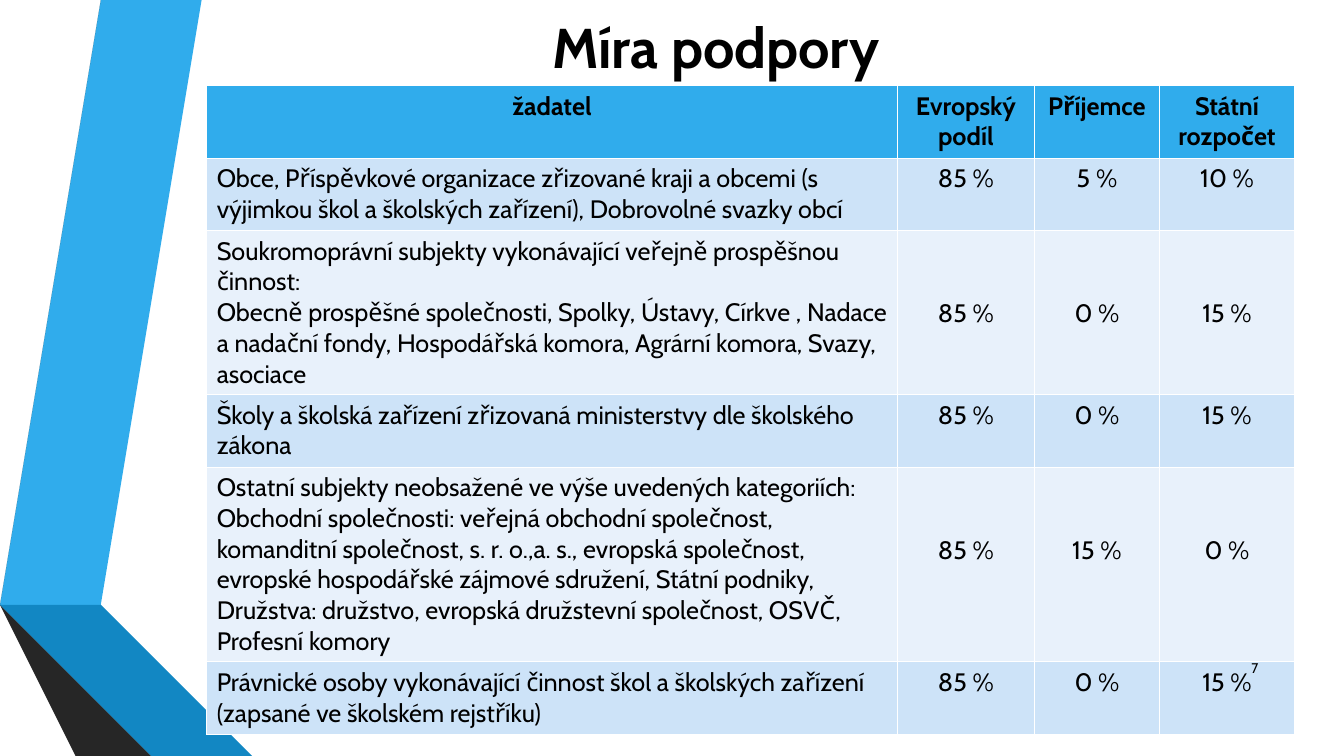
import pptx
import pptx.util
from pptx.dml.color import RGBColor
from pptx.enum.text import MSO_ANCHOR, PP_ALIGN

Inches, Pt = pptx.util.Inches, pptx.util.Pt

FONT = "Cabin"
BLACK = RGBColor(0x00, 0x00, 0x00)
BLUE = RGBColor(0x30, 0xAC, 0xEC)
BLUE_DARK = RGBColor(0x12, 0x87, 0xC3)
BLUE_EDGE = RGBColor(0x0C, 0x5A, 0x82)
GREY = RGBColor(0x59, 0x59, 0x59)
GREY_DARK = RGBColor(0x40, 0x40, 0x40)
GREY_EDGE = RGBColor(0x26, 0x26, 0x26)
BAND_DARK = RGBColor(0xCD, 0xE3, 0xF8)
BAND_LIGHT = RGBColor(0xE8, 0xF1, 0xFB)

WIDTH, HEIGHT = 13.33, 7.5
LINE = 0.31  # height of one line of table text

RIBBONS = [
    (BLUE, [(0.5, 5.78), (0.77, 5.83), (1.73, 0), (1.45, 0)]),
    (GREY, [(1.39, 0), (1.11, 0), (0.16, 5.73), (0.44, 5.77)]),
    (GREY_EDGE, [(0.16, 5.73), (1.45, HEIGHT), (1.51, HEIGHT)]),
    (BLUE_EDGE, [(0.5, 5.79), (2.08, HEIGHT), (2.14, HEIGHT)]),
    (BLUE_DARK, [(0.5, 5.78), (2.14, HEIGHT), (2.83, HEIGHT), (0.77, 5.83)]),
    (GREY_DARK, [(2.02, HEIGHT), (0.48, 5.83), (0.43, 5.77), (0.16, 5.73),
                 (1.51, HEIGHT)]),
]

COLUMNS = [6.85, 1.36, 1.24, 1.34]
ROWS = [0.72, 0.72, 1.59, 0.72, 1.89, 0.72]
HEADER = ["žadatel", "Evropský podíl", "Příjemce", "Státní rozpočet"]
SUPPORT = [
    ("Obce, Příspěvkové organizace zřizované kraji a obcemi (s výjimkou škol "
     "a školských zařízení), Dobrovolné svazky obcí", 85, 5, 10),
    ("Soukromoprávní subjekty vykonávající veřejně prospěšnou činnost:\n"
     "Obecně prospěšné společnosti, Spolky, Ústavy, Církve , Nadace a nadační "
     "fondy, Hospodářská komora, Agrární komora, Svazy, asociace", 85, 0, 15),
    ("Školy a školská zařízení zřizovaná ministerstvy dle školského zákona",
     85, 0, 15),
    ("Ostatní subjekty neobsažené ve výše uvedených kategoriích:\n"
     "Obchodní společnosti: veřejná obchodní společnost, komanditní "
     "společnost, s. r. o.,a. s., evropská společnost, evropské hospodářské "
     "zájmové sdružení, Státní podniky, Družstva: družstvo, evropská "
     "družstevní společnost, OSVČ, Profesní komory", 85, 15, 0),
    ("Právnické osoby vykonávající činnost škol a školských zařízení "
     "(zapsané ve školském rejstříku)", 85, 0, 15),
]


def write(tf, text, size, align, bold=False):
    tf.text = text
    tf.word_wrap = True
    for p in tf.paragraphs:
        p.alignment = align
        p.font.name = FONT
        p.font.size = Pt(size)
        p.font.bold = bold
        p.font.color.rgb = BLACK


def add_ribbon(s, color, points):
    builder = s.shapes.build_freeform(*points[0], scale=Inches(1))
    builder.add_line_segments(points[1:], close=True)
    sp = builder.convert_to_shape()
    sp.shadow.inherit = False
    sp.fill.solid()
    sp.fill.fore_color.rgb = color
    sp.line.fill.background()


def add_title(s, text):
    sp = s.shapes.title
    sp.left, sp.top = Inches(1.62), 0
    sp.width, sp.height = Inches(10.96), Inches(0.91)
    sp.text_frame.vertical_anchor = MSO_ANCHOR.MIDDLE
    write(sp.text_frame, text, 40, PP_ALIGN.CENTER, bold=True)


def fill_cell(cell, text, color, align, bold=False):
    cell.fill.solid()
    cell.fill.fore_color.rgb = color
    write(cell.text_frame, text, 18, align, bold)


def add_support_table(s):
    frame = s.shapes.add_table(len(ROWS), len(COLUMNS), Inches(2.05),
                               Inches(0.85), Inches(sum(COLUMNS)),
                               Inches(sum(ROWS)))
    table = frame.table
    for column, width in zip(table.columns, COLUMNS):
        column.width = Inches(width)
    for row, height in zip(table.rows, ROWS):
        row.height = Inches(height)
    for c, text in enumerate(HEADER):
        fill_cell(table.cell(0, c), text, BLUE, PP_ALIGN.CENTER, bold=True)
    for r, (applicant, *shares) in enumerate(SUPPORT, start=1):
        color = BAND_DARK if r % 2 else BAND_LIGHT
        fill_cell(table.cell(r, 0), applicant, color, PP_ALIGN.LEFT)
        for c, share in enumerate(shares, start=1):
            cell = table.cell(r, c)
            fill_cell(cell, f"{share} %", color, PP_ALIGN.CENTER)
            if "\n" in applicant:  # shares stand on the third line
                cell.margin_top = Inches(0.05 + 2 * LINE)


def add_page_number(s, number):
    sp = s.shapes.add_textbox(Inches(11.98), Inches(6.43), Inches(0.6),
                              Inches(0.4))
    sp.text_frame.vertical_anchor = MSO_ANCHOR.MIDDLE
    write(sp.text_frame, number, 10, PP_ALIGN.RIGHT)


def main():
    prs = pptx.Presentation()
    prs.slide_width, prs.slide_height = Inches(WIDTH), Inches(HEIGHT)
    s = prs.slides.add_slide(prs.slide_layouts[5])
    for color, points in RIBBONS:
        add_ribbon(s, color, points)
    add_title(s, "Míra podpory")
    add_support_table(s)
    add_page_number(s, "7")
    prs.save("out.pptx")


if __name__ == "__main__":
    main()
